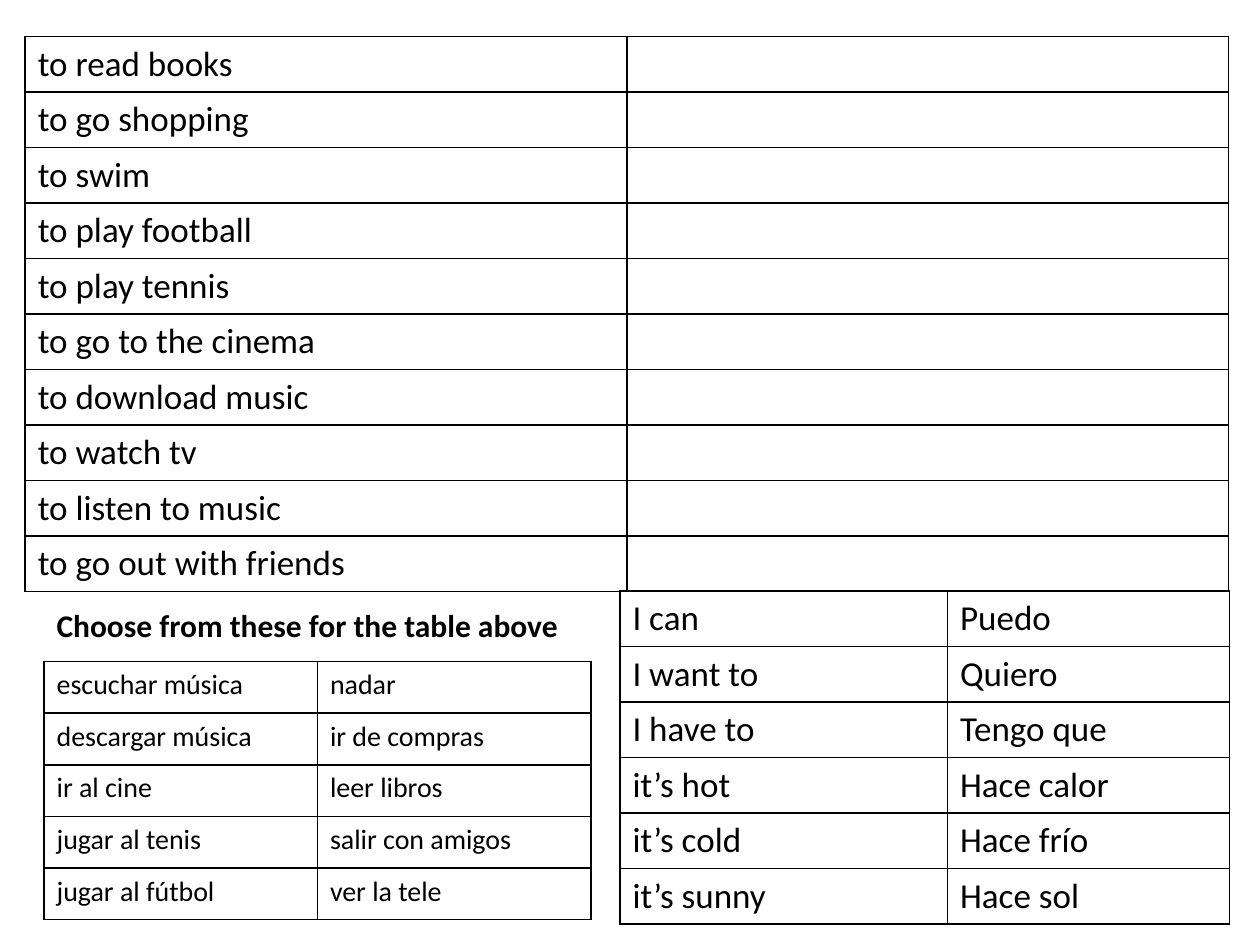
from dataclasses import dataclass

from lxml.etree import SubElement
from pptx import Presentation
from pptx.dml.color import RGBColor
from pptx.enum.text import MSO_AUTO_SIZE
from pptx.oxml.ns import qn
from pptx.util import Inches, Pt

BLACK = RGBColor(0, 0, 0)
ROW_HEIGHT = 0.41
BORDER_SIDES = ("a:lnL", "a:lnR", "a:lnT", "a:lnB")


@dataclass(frozen=True)
class WordTable:
    left: float
    top: float
    column_widths: tuple[float, ...]
    text_size: int
    rows: tuple[tuple[str, str], ...]


ACTIVITIES = (
    "to read books", "to go shopping", "to swim", "to play football",
    "to play tennis", "to go to the cinema", "to download music",
    "to watch tv", "to listen to music", "to go out with friends",
)

WORD_TABLES = (
    WordTable(0.2, 0.29, (4.775, 4.775), 20,
              tuple((activity, "") for activity in ACTIVITIES)),
    WordTable(4.92, 4.69, (2.6, 2.24), 20, (
        ("I can", "Puedo"),
        ("I want to", "Quiero"),
        ("I have to", "Tengo que"),
        ("it’s hot", "Hace calor"),
        ("it’s cold", "Hace frío"),
        ("it’s sunny", "Hace sol"),
    )),
    WordTable(0.35, 5.25, (2.17, 2.17), 16, (
        ("escuchar música", "nadar"),
        ("descargar música", "ir de compras"),
        ("ir al cine", "leer libros"),
        ("jugar al tenis", "salir con amigos"),
        ("jugar al fútbol", "ver la tele"),
    )),
)


def write_text(paragraph, text: str, size: int, bold: bool = False) -> None:
    run = paragraph.add_run()
    run.text = text
    text_format = {"name": "Calibri", "size": Pt(size), "bold": bold}
    for attribute, value in text_format.items():
        setattr(run.font, attribute, value)
    run.font.color.rgb = BLACK


def add_borders(cell) -> None:
    """Rule all four sides; the lines must come before the fill in tcPr."""
    properties = cell._tc.get_or_add_tcPr()
    for position, side in enumerate(BORDER_SIDES):
        line = SubElement(properties, qn(side), w=str(Pt(1)))
        fill = SubElement(line, qn("a:solidFill"))
        SubElement(fill, qn("a:srgbClr"), val=str(BLACK))
        properties.insert(position, line)


def draw_word_table(slide, words: WordTable) -> None:
    row_count = len(words.rows)
    table = slide.shapes.add_table(
        row_count, len(words.column_widths),
        Inches(words.left), Inches(words.top),
        Inches(sum(words.column_widths)), Inches(ROW_HEIGHT * row_count),
    ).table
    table.first_row = table.horz_banding = False
    for column, width in zip(table.columns, words.column_widths):
        column.width = Inches(width)
    for row, entries in zip(table.rows, words.rows):
        row.height = Inches(ROW_HEIGHT)
        for cell, entry in zip(row.cells, entries):
            cell.fill.background()
            add_borders(cell)
            if entry:
                write_text(cell.text_frame.paragraphs[0], entry, words.text_size)


def draw_instruction(slide) -> None:
    instruction = slide.shapes.add_textbox(
        Inches(0.35), Inches(4.76), Inches(4.41), Inches(0.4)).text_frame
    instruction.word_wrap = True
    instruction.auto_size = MSO_AUTO_SIZE.SHAPE_TO_FIT_TEXT
    write_text(instruction.paragraphs[0],
               "Choose from these for the table above", 18, bold=True)


def main() -> None:
    presentation = Presentation()
    presentation.slide_width = Inches(10)
    presentation.slide_height = Inches(7.5)
    slide = presentation.slides.add_slide(presentation.slide_layouts[6])
    for words in WORD_TABLES:
        draw_word_table(slide, words)
    draw_instruction(slide)
    presentation.save("out.pptx")


if __name__ == "__main__":
    main()
